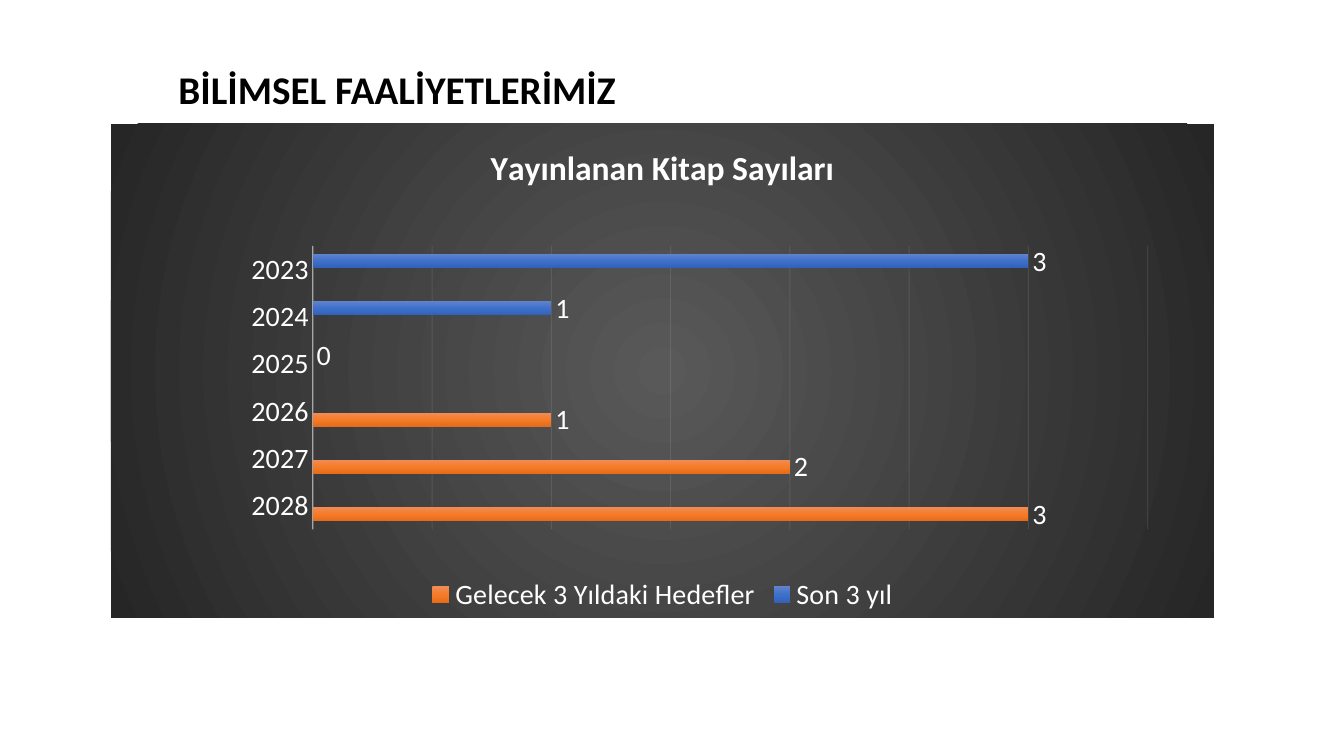
from lxml.etree import SubElement
from pptx import Presentation
from pptx.chart.data import CategoryChartData
from pptx.dml.color import RGBColor
from pptx.enum.chart import XL_CHART_TYPE, XL_LABEL_POSITION, XL_LEGEND_POSITION, XL_TICK_MARK
from pptx.enum.text import MSO_ANCHOR, MSO_AUTO_SIZE, PP_ALIGN
from pptx.oxml import parse_xml
from pptx.oxml.ns import nsdecls, qn
from pptx.util import Inches, Pt

HEADING = "BİLİMSEL FAALİYETLERİMİZ"
CHART_TITLE = "Yayınlanan Kitap Sayıları"
YEARS = ["2023", "2024", "2025", "2026", "2027", "2028"]
SERIES = [
    ("Son 3 yıl", [3, 1, 0, None, None, None], "past"),
    ("Gelecek 3 Yıldaki Hedefler", [None, None, None, 1, 2, 3], "target"),
]
COLORS = {"heading": "000000", "text": "FFFFFF", "line": "F2F2F2"}
GRADIENTS = {
    "past": [(0, "6183CB"), (50, "3E70CA"), (100, "3062BB")],
    "target": [(0, "F18C57"), (50, "F67B28"), (100, "E56C19")],
    "panel": [(0, "595959"), (100, "262626")],
}
DIRECTIONS = {
    "linear": '<a:lin ang="5400000" scaled="0"/>',
    "radial": '<a:path path="circle"><a:fillToRect l="50000" t="50000" r="50000" b="50000"/></a:path>',
}
FONT = "Calibri"
PLOT = {"x": 0.183, "y": 0.247, "w": 0.757, "h": 0.574}


def style_font(font, size, color, bold=False):
    font.name = FONT
    font.size = Pt(size)
    font.bold = bold
    font.color.rgb = RGBColor.from_string(COLORS[color])


def gradient(name, direction):
    stops = "".join(
        f'<a:gs pos="{share * 1000}"><a:srgbClr val="{color}"/></a:gs>'
        for share, color in GRADIENTS[name]
    )
    return (f'<a:gradFill {nsdecls("a")} rotWithShape="1"><a:gsLst>{stops}</a:gsLst>'
            f'{DIRECTIONS[direction]}</a:gradFill>')


def style_line(chart, line, owner, width, opacity):
    line.width = Pt(width)
    line.color.rgb = RGBColor.from_string(COLORS["line"])
    properties = chart.element.find(f".//{qn(owner)}/{qn('c:spPr')}")
    color = next(properties.iter(qn("a:srgbClr")))
    SubElement(color, qn("a:alpha"), val=str(opacity * 1000))


def place_plot(chart):
    area = chart.element.find(".//" + qn("c:plotArea"))
    for layout in area.findall(qn("c:layout")):
        area.remove(layout)
    modes = '<c:layoutTarget val="inner"/><c:xMode val="edge"/><c:yMode val="edge"/>'
    shares = "".join(f'<c:{side} val="{share}"/>' for side, share in PLOT.items())
    area.insert(0, parse_xml(
        f'<c:layout {nsdecls("c")}><c:manualLayout>{modes}{shares}</c:manualLayout></c:layout>'))


def add_heading(page):
    box = page.shapes.title
    box.left, box.top, box.width, box.height = map(Inches, (1.67, 0.4, 8.08, 1.02))
    frame = box.text_frame
    frame.auto_size = MSO_AUTO_SIZE.NONE
    frame.word_wrap = True
    frame.vertical_anchor = MSO_ANCHOR.MIDDLE
    para = frame.paragraphs[0]
    para.alignment = PP_ALIGN.LEFT
    para.line_spacing = 0.9
    span = para.add_run()
    span.text = HEADING
    style_font(span.font, 28, "heading", True)


def add_book_chart(page):
    data = CategoryChartData()
    data.categories = YEARS
    for name, values, _ in SERIES:
        data.add_series(name, values)
    chart = page.shapes.add_chart(
        XL_CHART_TYPE.BAR_CLUSTERED, *map(Inches, (1.1, 1.23, 10.94, 4.9)), data).chart
    style_font(chart.font, 20, "text")
    chart.element.find(qn("c:chart")).addnext(parse_xml(
        f'<c:spPr {nsdecls("c", "a")}>{gradient("panel", "radial")}<a:ln><a:noFill/></a:ln></c:spPr>'))

    chart.has_title = True
    span = chart.chart_title.text_frame.paragraphs[0].add_run()
    span.text = CHART_TITLE
    style_font(span.font, 24, "text", True)

    chart.has_legend = True
    chart.legend.position = XL_LEGEND_POSITION.BOTTOM
    chart.legend.include_in_layout = False
    style_font(chart.legend.font, 20, "text")

    years = chart.category_axis
    years.reverse_order = True
    years.major_tick_mark = years.minor_tick_mark = XL_TICK_MARK.NONE
    style_font(years.tick_labels.font, 20, "text")
    style_line(chart, years.format.line, "c:catAx", 1, 54)

    counts = chart.value_axis
    counts.minimum_scale, counts.maximum_scale, counts.major_unit = 0, 3.5, 0.5
    counts.has_major_gridlines = True
    style_line(chart, counts.major_gridlines.format.line, "c:majorGridlines", 0.75, 10)
    counts.visible = False

    plot = chart.plots[0]
    plot.gap_width, plot.overlap = 115, -20
    plot.vary_by_categories = False
    nodes = list(chart.element.iter(qn("c:ser")))
    for series, node, (_, _, fill) in zip(plot.series, nodes, SERIES):
        series.invert_if_negative = False
        series.format.line.fill.background()
        node.find(qn("c:spPr")).insert(0, parse_xml(gradient(fill, "linear")))
        labels = series.data_labels
        labels.show_value = True
        labels.position = XL_LABEL_POSITION.OUTSIDE_END
        style_font(labels.font, 20, "text")
    place_plot(chart)


def main():
    deck = Presentation()
    deck.slide_width, deck.slide_height = Inches(13.33), Inches(7.5)
    page = deck.slides.add_slide(deck.slide_layouts[5])
    add_heading(page)
    add_book_chart(page)
    deck.save("out.pptx")


if __name__ == "__main__":
    main()
